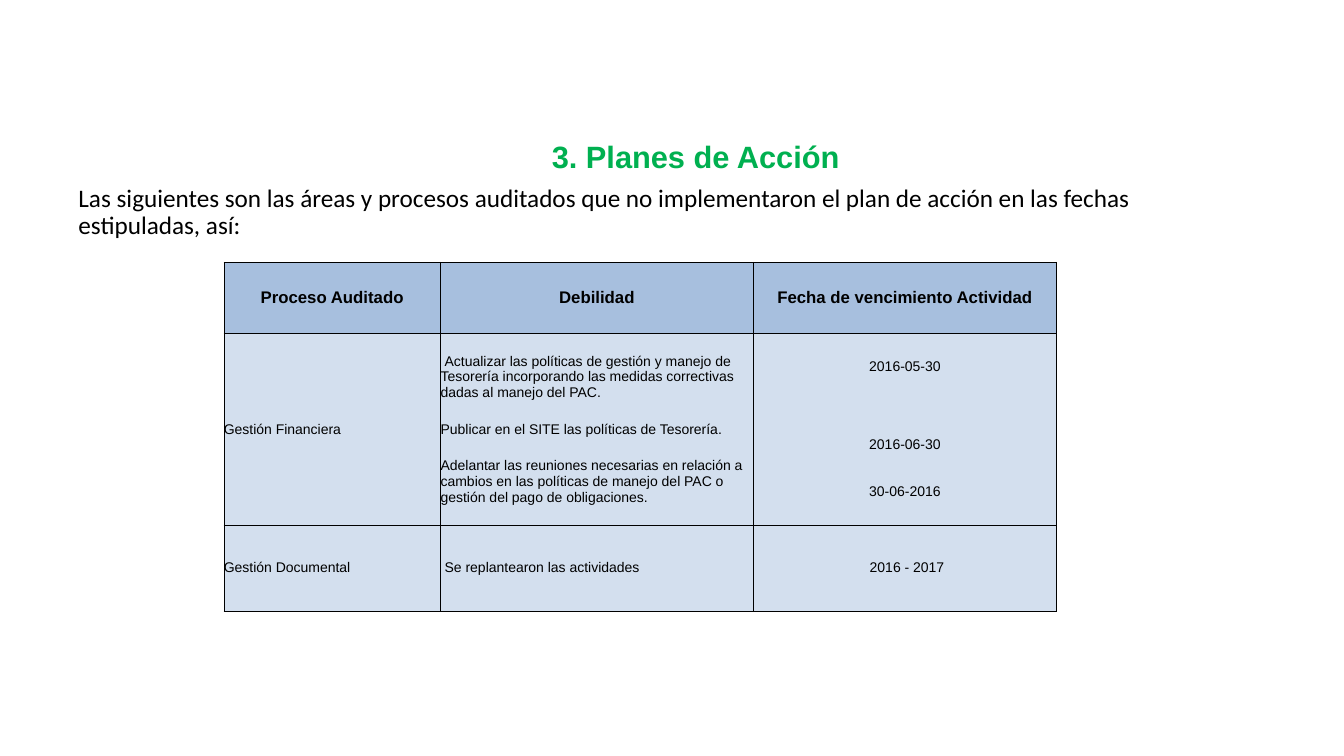
import pptx
import pptx.util
import pptx.dml.color
import pptx.enum.text
import lxml.etree
from pptx.oxml.ns import qn

Inches, Pt = pptx.util.Inches, pptx.util.Pt
Align = pptx.enum.text.PP_ALIGN

title = "3. Planes de Acción"
intro = ("Las siguientes son las áreas y procesos auditados que no implementaron "
         "el plan de acción en las fechas estipuladas, así:")
heads = ["Proceso Auditado", "Debilidad", "Fecha de vencimiento Actividad"]
tasks = [
    "Actualizar las políticas de gestión y manejo de Tesorería incorporando "
    "las medidas correctivas dadas al manejo del PAC.",
    "Publicar en el SITE las políticas de Tesorería.",
    "Adelantar las reuniones necesarias en relación a cambios en las políticas "
    "de manejo del PAC o gestión del pago de obligaciones.",
]
dates = ["2016-05-30", "2016-06-30", "30-06-2016"]
rows = [
    [[head] for head in heads],
    [["Gestión Financiera"], tasks, dates],
    [["Gestión Documental"], ["Se replantearon las actividades"], ["2016 - 2017"]],
]
gaps = {(1, 1): [0, 15, 15], (1, 2): [0, 44.6, 22.3]}
indents = {(1, 1), (2, 1), (2, 2)}
widths = [2.15, 3.1, 3.01]
heights = [0.71, 1.9, 0.85]

theme = {
    "green": "00B050", "black": "000000", "head": "A7BFDE", "body": "D3DFEE",
    "sans": "Arial", "text": "Calibri",
    "title": 22, "intro": 18, "label": 12, "cell": 10,
    "line": 0.5, "indent": 0.04,
}


def color(name):
    return pptx.dml.color.RGBColor.from_string(theme[name])


def style(para, face, size, tint="black", bold=False):
    for run in para.runs:
        run.font.name = theme[face]
        run.font.size = Pt(theme[size])
        run.font.bold = bold
        run.font.color.rgb = color(tint)


def add_text(slide, box, text):
    frame = slide.shapes.add_textbox(*map(Inches, box)).text_frame
    frame.word_wrap = True
    frame.text = text
    return frame.paragraphs[0]


def border(cell):
    props = cell._tc.get_or_add_tcPr()
    for side in ("a:lnL", "a:lnR", "a:lnT", "a:lnB"):
        line = lxml.etree.SubElement(props, qn(side), w=str(Pt(theme["line"])))
        fill = lxml.etree.SubElement(line, qn("a:solidFill"))
        lxml.etree.SubElement(fill, qn("a:srgbClr"), val=theme["black"])


def fill_cell(cell, row, col, lines):
    border(cell)
    cell.fill.solid()
    cell.fill.fore_color.rgb = color("body" if row else "head")
    cell.margin_left = cell.margin_right = 0
    cell.margin_top = cell.margin_bottom = 0
    cell.vertical_anchor = pptx.enum.text.MSO_ANCHOR.MIDDLE
    cell.text_frame.text = "\n".join(lines)
    spaces = gaps.get((row, col), [0])
    for index, para in enumerate(cell.text_frame.paragraphs):
        para.alignment = Align.CENTER if row == 0 or col == 2 else Align.LEFT
        if index:
            para.space_before = Pt(spaces[index])
        elif (row, col) in indents:
            props = para._p.get_or_add_pPr()
            props.set("marL", "0")
            props.set("indent", str(Inches(theme["indent"])))
        style(para, "sans", "cell" if row else "label", bold=row == 0)


def main():
    deck = pptx.Presentation()
    deck.slide_width, deck.slide_height = Inches(13.33), Inches(7.5)
    slide = deck.slides.add_slide(deck.slide_layouts[6])

    para = add_text(slide, (2.46, 1.32, 8.88, 0.47), title)
    para.alignment = Align.CENTER
    style(para, "sans", "title", "green", True)

    para = add_text(slide, (0.68, 1.79, 11.16, 0.65), intro)
    para.line_spacing = 0.9
    style(para, "text", "intro")

    table = slide.shapes.add_table(
        len(rows), len(heads), Inches(2.22), Inches(2.6),
        Inches(sum(widths)), Inches(sum(heights))).table
    for col, width in enumerate(widths):
        table.columns[col].width = Inches(width)
    for row, cells in enumerate(rows):
        table.rows[row].height = Inches(heights[row])
        for col, lines in enumerate(cells):
            fill_cell(table.cell(row, col), row, col, lines)

    deck.save("out.pptx")


if __name__ == "__main__":
    main()
